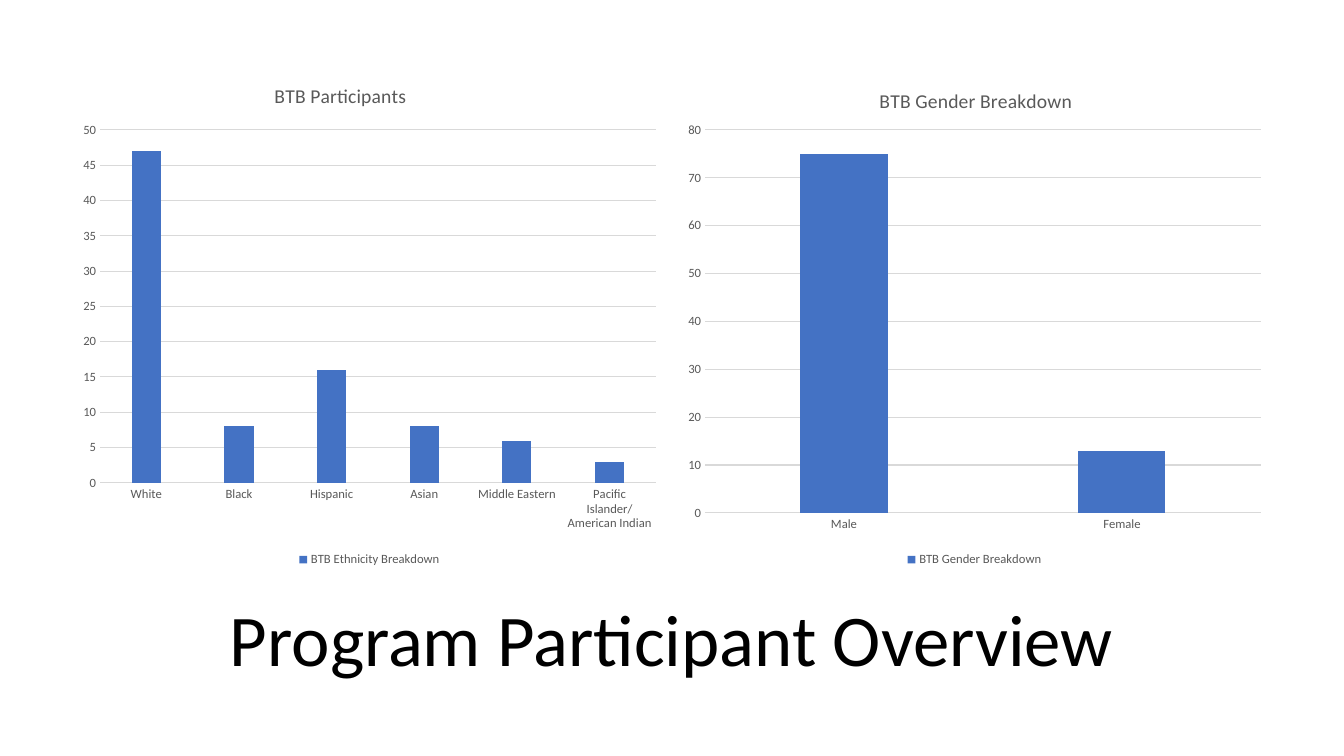
from pptx import Presentation
from pptx.chart.data import CategoryChartData
from pptx.dml.color import RGBColor
from pptx.enum.chart import XL_CHART_TYPE as ChartType, XL_LEGEND_POSITION as LegendPosition
from pptx.enum.chart import XL_TICK_MARK as TickMark
from pptx.enum.text import MSO_ANCHOR, PP_ALIGN
from pptx.oxml import parse_xml
from pptx.oxml.ns import nsdecls, qn
from pptx.util import Emu, Pt

COLORS = {"text": "000000", "label": "595959", "grid": "D9D9D9", "bar": "4472C4"}
CHART_TOP, CHART_WIDTH, CHART_HEIGHT = 61, 597, 510


def px(length):
    return Emu(round(length * 914400 / 100.8))


def place(element, index, target, **fractions):
    for old in element.findall(qn("c:layout")):
        element.remove(old)
    items = "".join(f'<c:{key} val="{value}"/>' for key, value in fractions.items())
    inner = f'<c:layoutTarget val="{target}"/>' if target else ""
    modes = '<c:xMode val="edge"/><c:yMode val="edge"/>'
    element.insert(index, parse_xml(
        f'<c:layout {nsdecls("c")}><c:manualLayout>{inner}{modes}{items}'
        '</c:manualLayout></c:layout>'))


prs = Presentation()
prs.slide_width, prs.slide_height = px(1344), px(756)
slide = prs.slides.add_slide(prs.slide_layouts[5])

heading = slide.shapes.title
heading.left, heading.top, heading.width, heading.height = map(px, (92, 591, 1159, 104))
heading.text_frame.text = "Program Participant Overview"
heading.text_frame.vertical_anchor = MSO_ANCHOR.MIDDLE
heading_line = heading.text_frame.paragraphs[0]
heading_line.alignment = PP_ALIGN.CENTER
heading_line.line_spacing = 0.9
heading_line.font.size = Pt(52)
heading_line.font.name = "Calibri"
heading_line.font.color.rgb = RGBColor.from_string(COLORS["text"])

breakdowns = [
    {"left": 71, "title": "BTB Participants", "title_at": (271, 79),
     "series": "BTB Ethnicity Breakdown", "plot_height": 353, "top": 50, "step": 5,
     "counts": {"White": 47, "Black": 8, "Hispanic": 16, "Asian": 8, "Middle Eastern": 6,
                "Pacific Islander/American Indian": 3}},
    {"left": 676, "title": "BTB Gender Breakdown", "title_at": (876, 84),
     "series": "BTB Gender Breakdown", "plot_height": 383, "top": 80, "step": 10,
     "counts": {"Male": 75, "Female": 13}},
]

for breakdown in breakdowns:
    data = CategoryChartData()
    data.categories = list(breakdown["counts"])
    data.add_series(breakdown["series"], list(breakdown["counts"].values()))
    chart = slide.shapes.add_chart(
        ChartType.COLUMN_CLUSTERED, px(breakdown["left"]), px(CHART_TOP),
        px(CHART_WIDTH), px(CHART_HEIGHT), data).chart

    chart.has_title = True
    chart.chart_title.text_frame.text = breakdown["title"]
    chart.chart_title.include_in_layout = False
    title_font = chart.chart_title.text_frame.paragraphs[0].runs[0].font
    chart.has_legend = True
    chart.legend.position = LegendPosition.BOTTOM
    chart.legend.include_in_layout = False
    categories, values = chart.category_axis, chart.value_axis

    fonts = {14: [title_font], 9: [chart.font, chart.legend.font,
                                   categories.tick_labels.font, values.tick_labels.font]}
    for size, group in fonts.items():
        for font in group:
            font.size = Pt(size)
            font.name = "Calibri"
            font.bold = False
            font.color.rgb = RGBColor.from_string(COLORS["label"])

    for axis in (categories, values):
        axis.major_tick_mark = axis.minor_tick_mark = TickMark.NONE
    values.minimum_scale, values.maximum_scale = 0, breakdown["top"]
    values.major_unit = breakdown["step"]
    values.format.line.fill.background()
    for line in (categories.format.line, values.major_gridlines.format.line):
        line.color.rgb = RGBColor.from_string(COLORS["grid"])
        line.width = Pt(0.75)

    bars = chart.plots[0]
    bars.gap_width, bars.overlap, bars.vary_by_categories = 219, -27, False
    bars.series[0].format.fill.solid()
    bars.series[0].format.fill.fore_color.rgb = RGBColor.from_string(COLORS["bar"])

    title_left, title_top = breakdown["title_at"]
    place(chart.chart_title._element, 1, None,
          x=(title_left - breakdown["left"]) / CHART_WIDTH,
          y=(title_top - CHART_TOP) / CHART_HEIGHT)
    place(chart._chartSpace.chart.plotArea, 0, "inner",
          x=29 / CHART_WIDTH, y=69 / CHART_HEIGHT,
          w=556 / CHART_WIDTH, h=breakdown["plot_height"] / CHART_HEIGHT)

prs.save("out.pptx")
